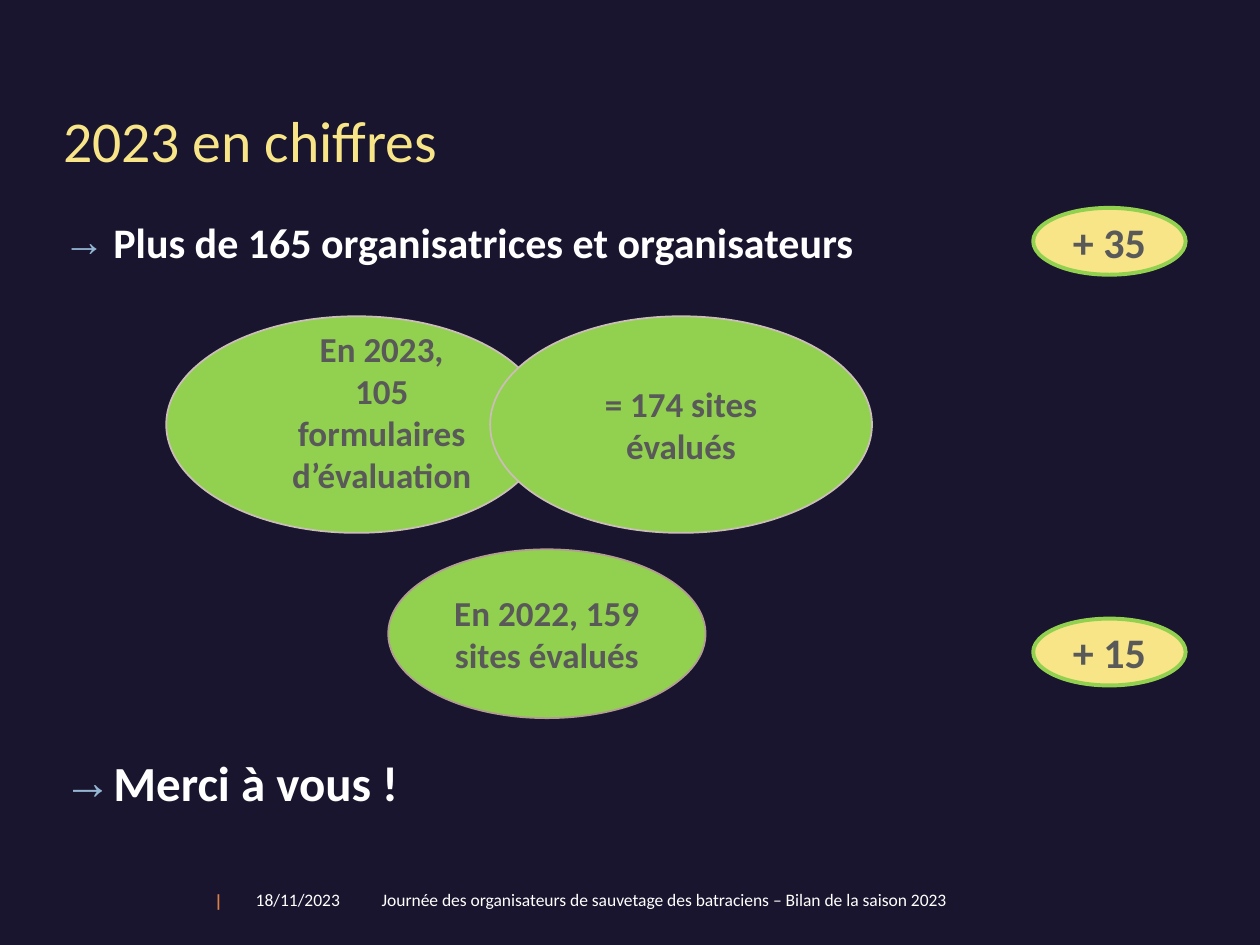
from lxml import etree
from pptx import Presentation
from pptx.dml.color import RGBColor
from pptx.enum.shapes import MSO_SHAPE
from pptx.enum.text import MSO_ANCHOR, MSO_AUTO_SIZE, PP_ALIGN
from pptx.oxml.ns import qn
from pptx.util import Pt

OVAL = MSO_SHAPE.OVAL
LEFT, CENTER = PP_ALIGN.LEFT, PP_ALIGN.CENTER
TOP, MIDDLE, BOTTOM = MSO_ANCHOR.TOP, MSO_ANCHOR.MIDDLE, MSO_ANCHOR.BOTTOM
NO_FIT = MSO_AUTO_SIZE.NONE

COLORS = {
    "night": "19152E", "yellow": "F7E588", "green": "92D050",
    "white": "FFFFFF", "grey": "595959", "blue": "94B6D2",
    "orange": "DD8047", "beige": "CBBDB7", "taupe": "B29C93",
}


def rgb(name):
    return RGBColor.from_string(COLORS[name])


def write(p, text, size=20, color="white", bold=False, align=LEFT,
          spacing=None, before=0, indent=0, bullet=None, tab=None):
    """Fill one paragraph with formatted text."""
    pPr = p._p.get_or_add_pPr()
    pPr.set("marL", str(Pt(indent)))
    pPr.set("indent", str(-Pt(indent) if bullet else 0))
    if bullet:
        clr = etree.SubElement(pPr, qn("a:buClr"))
        etree.SubElement(clr, qn("a:srgbClr"), val=COLORS["blue"])
        etree.SubElement(pPr, qn("a:buFont"), typeface="Arial")
        etree.SubElement(pPr, qn("a:buChar"), char=bullet)
    if tab:
        tabs = etree.SubElement(pPr, qn("a:tabLst"))
        etree.SubElement(tabs, qn("a:tab"), pos=str(Pt(tab)), algn="l")
    p.alignment = align
    p.space_before = Pt(before)
    if spacing:
        p.line_spacing = spacing
    r = p.add_run()
    r.text = text
    r.font.name = "Calibri"
    r.font.size = Pt(size)
    r.font.bold = bold
    r.font.color.rgb = rgb(color)


class Deck:
    def __init__(self, width, height):
        self.prs = Presentation()
        self.prs.slide_width, self.prs.slide_height = Pt(width), Pt(height)
        self.s = self.prs.slides.add_slide(self.prs.slide_layouts[1])
        fill = self.s.background.fill
        fill.solid()
        fill.fore_color.rgb = rgb("night")

    def frame(self, sp, lines, anchor=TOP, bottom=3.6, **style):
        """Write lines, each a text or a (text, own style) pair."""
        tf = sp.text_frame
        tf.word_wrap = True
        tf.auto_size = NO_FIT
        tf.vertical_anchor = anchor
        tf.margin_left = tf.margin_right = Pt(7.2)
        tf.margin_top, tf.margin_bottom = Pt(3.6), Pt(bottom)
        for i, line in enumerate(lines):
            text, own = (line, {}) if isinstance(line, str) else line
            p = tf.add_paragraph() if i else tf.paragraphs[0]
            write(p, text, **{**style, **own})

    def placeholder(self, idx, box, lines, **style):
        sp = self.s.placeholders[idx]
        sp.left, sp.top, sp.width, sp.height = map(Pt, box)
        self.frame(sp, lines, **style)

    def label(self, box, text, **style):
        self.frame(self.s.shapes.add_textbox(*map(Pt, box)), [text], **style)

    def bubble(self, box, lines, fill="green", line="beige", weight=1, **style):
        sp = self.s.shapes.add_shape(OVAL, *map(Pt, box))
        sp.shadow.inherit = False
        sp.fill.solid()
        sp.fill.fore_color.rgb = rgb(fill)
        sp.line.color.rgb = rgb(line)
        sp.line.width = Pt(weight)
        self.frame(sp, lines, anchor=MIDDLE, color="grey", bold=True,
                   align=CENTER, **style)


def main():
    deck = Deck(720, 540)

    # Title and list
    deck.placeholder(0, (28.8, 0, 661, 103.7), ["2023 en chiffres"],
                     anchor=BOTTOM, size=33, color="yellow", spacing=0.9)
    deck.placeholder(1, (28.8, 123.1, 661, 362.9),
                     ["Plus de 165 organisatrices et organisateurs",
                      ("Merci à vous !", {"size": 28, "before": 281})],
                     size=24, bold=True, spacing=0.9, indent=28.8, bullet="→")

    # Footer
    deck.label((109.4, 500.4, 31, 28.8), "|", anchor=MIDDLE, size=10,
               color="orange", bold=True, align=CENTER)
    deck.label((139, 504.7, 502.6, 18.7),
               "18/11/2023\tJournée des organisateurs de sauvetage des "
               "batraciens – Bilan de la saison 2023", size=10, tab=84)

    # Counts of evaluated sites
    deck.bubble((95, 180.7, 217.5, 123.8),
                ["En 2023,", "105 formulaires d’évaluation"],
                indent=28.8, bottom=19)
    deck.bubble((280.1, 180.7, 218.2, 123.8), ["= 174 sites évalués"])
    deck.bubble((221.8, 313.9, 181.4, 96.5), ["En 2022, 159 sites évalués"],
                line="taupe")

    # Increases over the previous year
    for top, gain in ((118.8, "+ 35"), (353.5, "+ 15")):
        deck.bubble((590.4, top, 87.1, 38.2), [gain], fill="yellow",
                    line="green", weight=2.25, size=24)

    deck.prs.save("out.pptx")


if __name__ == "__main__":
    main()
